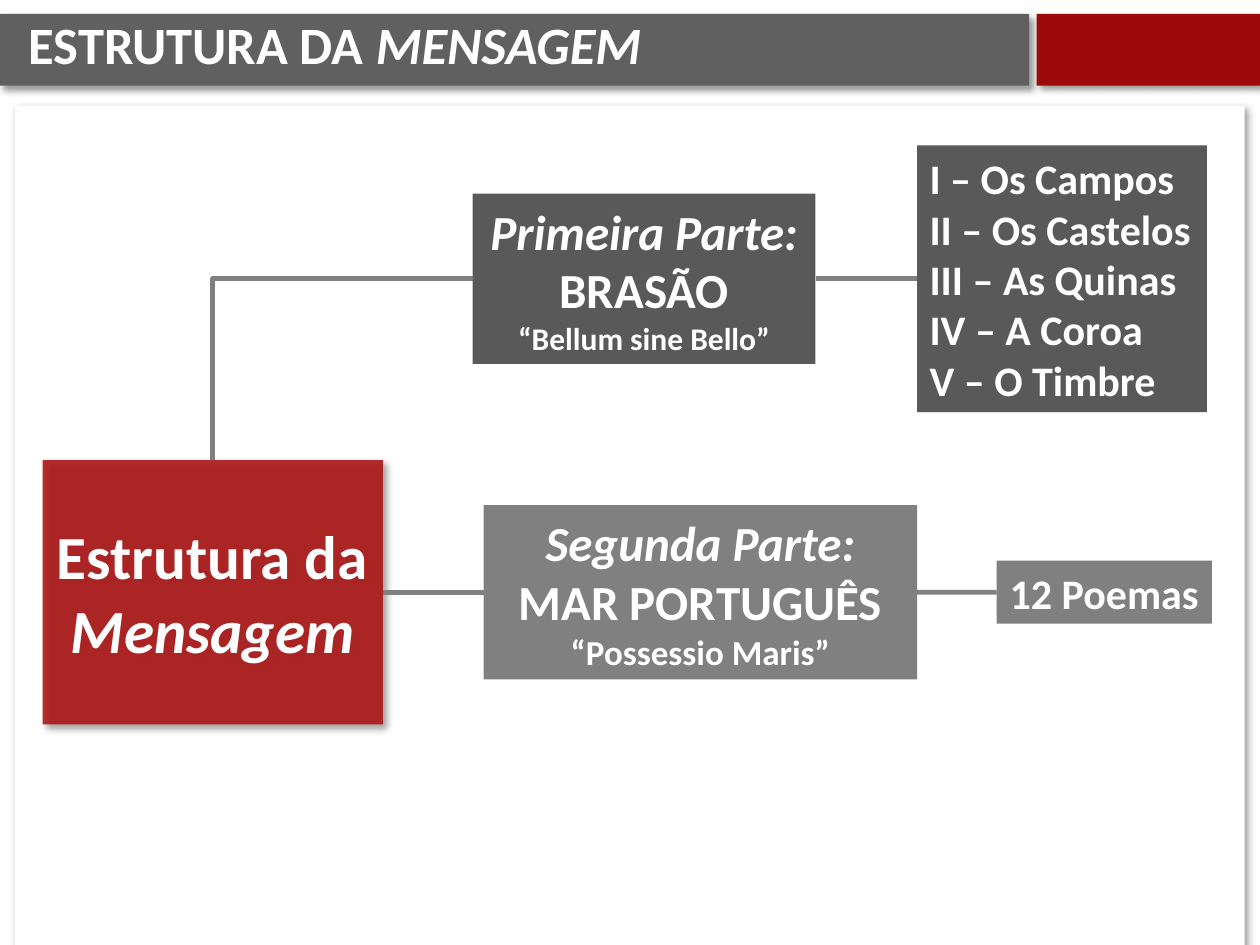
from lxml import etree
from pptx import Presentation
from pptx.dml.color import RGBColor
from pptx.enum.shapes import MSO_CONNECTOR, MSO_SHAPE
from pptx.enum.text import MSO_ANCHOR, PP_ALIGN
from pptx.oxml.ns import qn
from pptx.util import Cm, Pt

RECT = MSO_SHAPE.RECTANGLE
STRAIGHT, ELBOW = MSO_CONNECTOR.STRAIGHT, MSO_CONNECTOR.ELBOW
LEFT, CENTER = PP_ALIGN.LEFT, PP_ALIGN.CENTER
MIDDLE = MSO_ANCHOR.MIDDLE
TOP_SIDE, LEFT_SIDE, RIGHT_SIDE = 0, 1, 3

WHITE, DARK, GREY = "FFFFFF", "595959", "808080"
UPPER_ROW, LOWER_ROW = 5.62, 11.94

PANELS = [
    (0, 0.28, 20.75, 1.45, "606060"),
    (20.9, 0.28, 4.5, 1.45, "9C0A0A"),
    (0.3, 2.13, 24.79, 17.04, WHITE),
]

TITLE = [[("ESTRUTURA DA ", 30, False), ("MENSAGEM", 30, True)]]

NODES = {
    "work": dict(
        left=0.86, middle=LOWER_ROW, width=6.86, height=5.33, fill="AC1919",
        opacity=91, shadow=True,
        lines=[[("Estrutura da", 35, False)], [("Mensagem", 35, True)]]),
    "first part": dict(
        left=9.53, middle=UPPER_ROW, width=6.91, height=3.43, fill=DARK,
        lines=[[("Primeira Parte:", 28, True)], [("BRASÃO", 28, False)],
               [("“Bellum sine Bello”", 18, False)]]),
    "second part": dict(
        left=9.75, middle=LOWER_ROW, width=8.74, height=3.51, fill=GREY,
        lines=[[("Segunda Parte:", 28, True)], [("MAR PORTUGUÊS", 28, False)],
               [("“Possessio Maris”", 20, False)]]),
    "sections": dict(
        left=18.49, middle=UPPER_ROW, width=5.84, height=5.38, fill=DARK,
        align=LEFT, wrap=False,
        lines=[[(text, 24, False)] for text in (
            "I – Os Campos", "II – Os Castelos", "III – As Quinas",
            "IV – A Coroa", "V – O Timbre")]),
    "poems": dict(
        left=20.09, middle=LOWER_ROW, width=4.34, height=1.27, fill=GREY,
        wrap=False, lines=[[("12 Poemas", 24, False)]]),
}

LINKS = [
    ("first part", LEFT_SIDE, "work", TOP_SIDE, ELBOW),
    ("work", RIGHT_SIDE, "second part", LEFT_SIDE, STRAIGHT),
    ("first part", RIGHT_SIDE, "sections", LEFT_SIDE, STRAIGHT),
    ("second part", RIGHT_SIDE, "poems", LEFT_SIDE, STRAIGHT),
]


def color(value):
    return RGBColor.from_string(value)


def add_child(parent, tag, **attributes):
    return etree.SubElement(parent, qn(tag), attributes)


def write(box, lines, align=LEFT, wrap=True, spacing=None):
    frame = box.text_frame
    frame.word_wrap = wrap
    frame.vertical_anchor = MIDDLE
    for index, line in enumerate(lines):
        para = frame.add_paragraph() if index else frame.paragraphs[0]
        para.alignment = align
        para.line_spacing = spacing
        for text, size, italic in line:
            span = para.add_run()
            span.text = text
            span.font.name = "Calibri"
            span.font.size = Pt(size)
            span.font.bold = True
            span.font.italic = italic
            span.font.color.rgb = color(WHITE)


def add_block(page, left, top, width, height, fill, opacity=100, shadow=False):
    block = page.shapes.add_shape(RECT, Cm(left), Cm(top), Cm(width), Cm(height))
    block.fill.solid()
    block.fill.fore_color.rgb = color(fill)
    block.line.fill.background()
    block.shadow.inherit = False
    properties = block.element.spPr
    if opacity < 100:
        tone = properties.find(qn("a:solidFill")).find(qn("a:srgbClr"))
        add_child(tone, "a:alpha", val=str(opacity * 1000))
    if shadow:
        outer = add_child(properties.find(qn("a:effectLst")), "a:outerShdw",
                          blurRad=str(Pt(4)), dist=str(Pt(3)), dir="2700000",
                          algn="tl", rotWithShape="0")
        tone = add_child(outer, "a:srgbClr", val="000000")
        add_child(tone, "a:alpha", val="40000")
    return block


def add_node(page, left, middle, width, height, fill, lines, align=CENTER,
             wrap=True, opacity=100, shadow=False):
    block = add_block(page, left, middle - height / 2, width, height, fill,
                      opacity, shadow)
    write(block, lines, align=align, wrap=wrap)
    return block


def add_link(page, start, start_side, end, end_side, kind):
    link = page.shapes.add_connector(kind, 0, 0, 0, 0)
    link.begin_connect(start, start_side)
    link.end_connect(end, end_side)
    link.line.color.rgb = color(GREY)
    link.line.width = Pt(2.75)
    properties = link._element.spPr
    add_child(properties, "a:effectLst")
    if kind == ELBOW:
        properties.find(qn("a:prstGeom")).set("prst", "bentConnector2")


def main():
    deck = Presentation()
    deck.slide_width, deck.slide_height = Cm(25.4), Cm(19.05)
    page = deck.slides.add_slide(deck.slide_layouts[6])
    for panel in PANELS:
        add_block(page, *panel, shadow=True)
    title = page.shapes.add_textbox(Cm(0.33), Cm(0), Cm(16.15), Cm(1.93))
    write(title, TITLE, spacing=0.9)
    nodes = {name: add_node(page, **node) for name, node in NODES.items()}
    for start, start_side, end, end_side, kind in LINKS:
        add_link(page, nodes[start], start_side, nodes[end], end_side, kind)
    deck.save("out.pptx")


if __name__ == "__main__":
    main()
